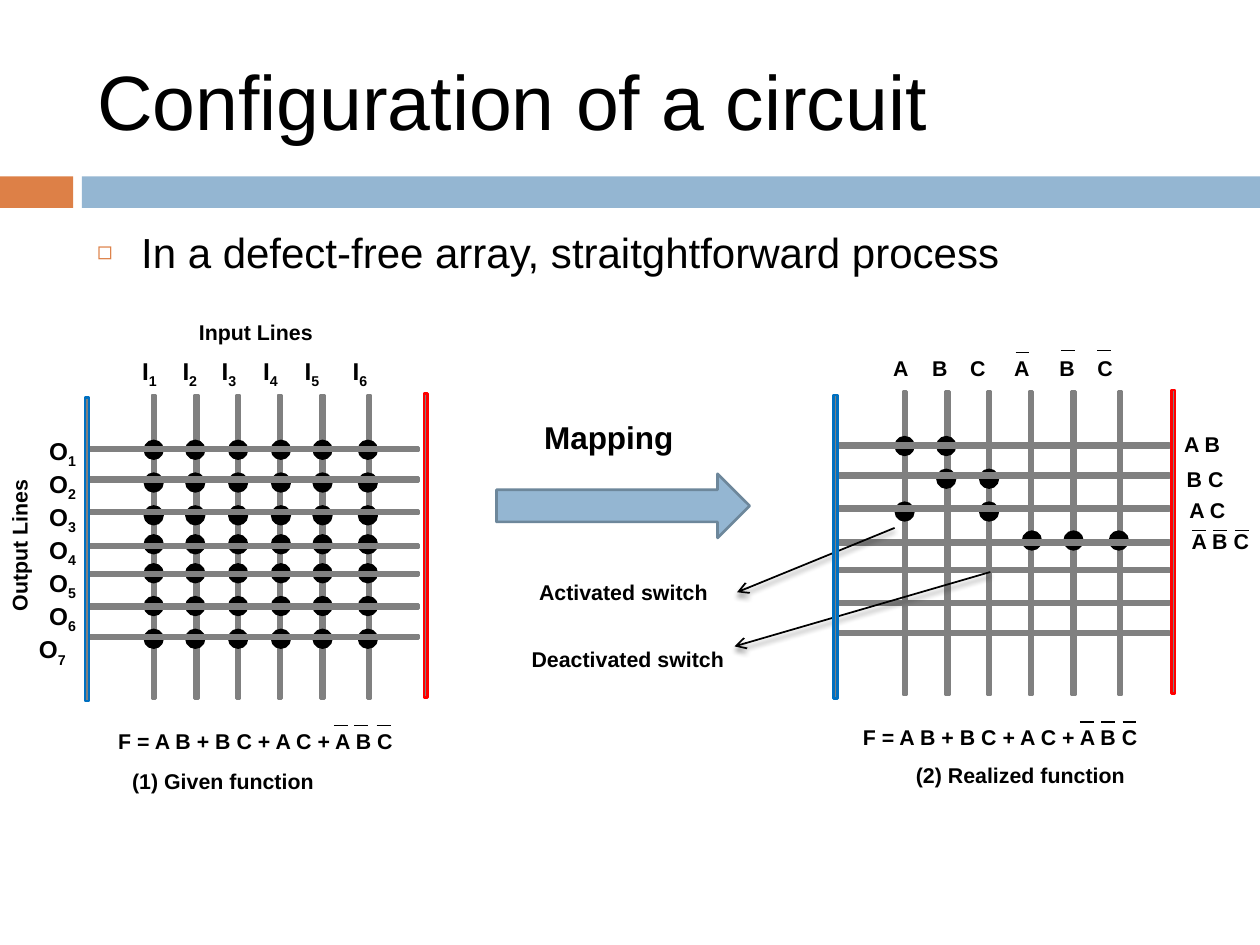
from lxml import etree
from pptx import Presentation
from pptx.dml.color import RGBColor
from pptx.enum import shapes, text
from pptx.oxml import parse_xml
from pptx.oxml.ns import nsdecls, qn
from pptx.util import Inches, Pt

# Content
TITLE = "Configuration of a circuit"
POINT = "In a defect-free array, straitghtforward process"
FORM = "F = A B + B C + A C + A B C"
LABELS = [  # text, left, top, width, size, turn
    ("A B", 9.3, 3.37, 0.59, 12.2, 0),
    ("B C", 9.32, 3.65, 0.59, 12.2, 0),
    ("A C", 9.34, 3.9, 0.59, 12.2, 0),
    ("A B C", 9.36, 4.14, 0.76, 12.2, 0),
    ("Input Lines", 1.48, 2.48, 1.51, 12.2, 0),
    ("Output Lines", -0.6, 4.04, 1.51, 12.2, 270),
    ("Activated switch", 4.18, 4.55, 1.66, 12.2, 0),
    ("Deactivated switch", 4.12, 5.08, 1.98, 12.2, 0),
    (FORM, 0.84, 5.73, 2.73, 12.2, 0),
    (FORM, 6.75, 5.7, 2.73, 12.2, 0),
    ("(1) Given function", 0.95, 6.05, 1.9, 12.2, 0),
    ("(2) Realized function", 7.17, 6, 3.19, 12.2, 0),
    ("Mapping", 4.22, 3.27, 1.47, 18, 0),
]
INPUTS = [("I", str(n)) for n in range(1, 7)]
OUTPUTS = [("O", str(n)) for n in range(1, 8)]
SIGNALS = [(s, "") for s in "ABCABC"]
IN_TABS = [0.32, 0.63, 0.96, 1.29, 1.67]
SIG_TABS = [0.31, 0.61, 0.96, 1.32, 1.62]
BARS = [  # left and height of each negation bar
    (9.46, 4.21), (9.63, 4.21), (9.8, 4.21),
    (8.06, 2.8), (8.42, 2.78), (8.71, 2.78),
    (2.65, 5.76), (2.81, 5.76), (2.99, 5.76),
    (8.57, 5.73), (8.74, 5.73), (8.91, 5.73),
]
CALLS = [(7.1, 4.19, 5.85, 4.7), (7.86, 4.54, 5.83, 5.13)]
RAILS = [  # centre x, centre y, colour
    (3.38, 4.33, "FF0000"), (0.69, 4.36, "0070C0"),
    (9.31, 4.3, "FF0000"), (6.63, 4.34, "0070C0"),
]

# Grid of the left array; the right one is the same, shifted
COLS = [1.22, 1.56, 1.89, 2.22, 2.56, 2.93]
ROWS = [3.55, 3.79, 4.05, 4.32, 4.54, 4.8, 5.04]
DOT_X = [1.15, 1.48, 1.82, 2.16, 2.49, 2.85]
DOT_Y = [3.5, 3.76, 4.02, 4.25, 4.48, 4.74, 5]
TALL, THIN, WIDE, DOT = 2.41, 0.03, 2.62, 0.14
ALL_ON = [range(6)] * 7
MAPPED = [(0, 1), (1, 2), (0, 2), (3, 4, 5)]
SHIFT_X, SHIFT_Y = 5.96, -0.03

prs = Presentation()
prs.slide_width, prs.slide_height = Inches(10), Inches(7.5)
slide = prs.slides.add_slide(prs.slide_layouts[1])
KIND = shapes.MSO_SHAPE


def hue(code):
    return RGBColor.from_string(code)


def box(x, y, w, h):
    return [Inches(v) for v in (x, y, w, h)]


def draw(kind, x, y, w, h, fill, edge=None):
    shape = slide.shapes.add_shape(kind, *box(x, y, w, h))
    shape.shadow.inherit = False
    shape.fill.solid()
    shape.fill.fore_color.rgb = hue(fill)
    if edge:
        shape.line.color.rgb = hue(edge)
        shape.line.width = Pt(1.5)
    else:
        shape.line.fill.background()
    return shape


def wire(mid_x, mid_y, edge="808080"):
    bar = draw(KIND.RECTANGLE, mid_x - TALL / 2, mid_y - THIN / 2,
               TALL, THIN, "808080", edge)
    bar.rotation = 90


def array(dx, dy, switches):
    for x in COLS:
        wire(x + dx, 4.34 + dy)
    for y, row in zip(DOT_Y, switches):
        for col in row:
            draw(KIND.OVAL, DOT_X[col] + dx, y + dy, DOT, DOT, "000000", "000000")
    for y in ROWS:
        draw(KIND.RECTANGLE, 0.7 + dx, y + dy, WIDE, THIN, "808080", "808080")


def line(x1, y1, x2, y2, width):
    link = slide.shapes.add_connector(
        shapes.MSO_CONNECTOR.STRAIGHT, *box(x1, y1, x2, y2))
    link.line.color.rgb = hue("000000")
    link.line.width = Pt(width)
    return link, etree.SubElement(link._element.spPr, qn("a:effectLst"))


def write(para, words, size, bold=True, sub=False):
    run = para.add_run()
    run.text = words
    font = run.font
    font.name, font.size, font.bold = "Arial", Pt(size), bold
    font.color.rgb = hue("000000")
    if sub:
        run._r.get_or_add_rPr().set("baseline", "-25000")


def label(x, y, w, h):
    shape = slide.shapes.add_textbox(*box(x, y, w, h))
    shape.text_frame.word_wrap = True
    return shape, shape.text_frame.paragraphs[0]


def heads(x, y, w, names, tabs, size):
    para = label(x, y, w, 0.32)[1]
    stops = etree.SubElement(para._p.get_or_add_pPr(), qn("a:tabLst"))
    for pos in tabs:
        etree.SubElement(stops, qn("a:tab"), pos=str(Inches(pos)), algn="l")
    for i, (name, num) in enumerate(names):
        write(para, "\t" + name if i else name, size)
        if num:
            write(para, num, size, sub=True)


def place(shape, spot, words, size):
    shape.left, shape.top, shape.width, shape.height = box(*spot)
    frame = shape.text_frame
    frame.auto_size = text.MSO_AUTO_SIZE.NONE
    para = frame.paragraphs[0]
    para.alignment = text.PP_ALIGN.LEFT
    write(para, words, size, bold=False)
    return frame, para


# Title, band and bullet
draw(KIND.RECTANGLE, 0, 1.4, 0.58, 0.25, "DD8047")
draw(KIND.RECTANGLE, 0.65, 1.4, 9.35, 0.25, "94B6D2")
frame, para = place(slide.shapes.title, (0.67, 0.25, 8.92, 1.08), TITLE, 44)
frame.vertical_anchor = text.MSO_ANCHOR.MIDDLE
frame, para = place(slide.placeholders[1], (0.67, 1.75, 9.25, 0.76), POINT, 24)
para.space_before = Pt(7)
props = para._p.get_or_add_pPr()
props.set("marL", str(Inches(0.35)))
props.set("indent", str(Inches(-0.35)))
for tag in ('<a:buClr %s><a:srgbClr val="DD8047"/></a:buClr>',
            '<a:buSzPct %s val="60000"/>', '<a:buChar %s char="◻"/>'):
    props.append(parse_xml(tag % nsdecls("a")))

# Both arrays
array(0, 0, ALL_ON)
array(SHIFT_X, SHIFT_Y, MAPPED)

# Callout arrows with a soft shadow
for ends in CALLS:
    link, effects = line(*ends, 1)
    etree.SubElement(link.line._get_or_add_ln(), qn("a:tailEnd"), type="arrow")
    effects.append(parse_xml(
        '<a:outerShdw %s blurRad="38100" dist="30480" dir="5400000">'
        '<a:srgbClr val="000000"><a:alpha val="45000"/></a:srgbClr>'
        '</a:outerShdw>' % nsdecls("a")))
for rail in RAILS:
    wire(*rail)
draw(KIND.RIGHT_ARROW, 3.94, 3.76, 2.01, 0.51, "94B6D2", "6D879B")

# Labels
for words, x, y, w, size, turn in LABELS:
    shape, para = label(x, y, w, 0.4 if size == 18 else 0.31)
    shape.rotation = turn
    write(para, words, size)
heads(1.03, 2.78, 2.81, INPUTS, IN_TABS, 13.9)
heads(6.99, 2.77, 2.29, SIGNALS, SIG_TABS, 12.2)

# Output names, the last one set in a little
shape, para = label(-0.02, 3.41, 0.72, 1.97)
for i, (name, num) in enumerate(OUTPUTS):
    if i:
        para = shape.text_frame.add_paragraph()
    para.alignment = text.PP_ALIGN.RIGHT
    write(para, name, 13.9)
    write(para, num, 13.9, sub=True)
para._p.get_or_add_pPr().set("marR", str(Inches(0.08)))

# Negation bars
for x, y in BARS:
    line(x, y, x + 0.11, y, 0.79)

prs.save("out.pptx")
